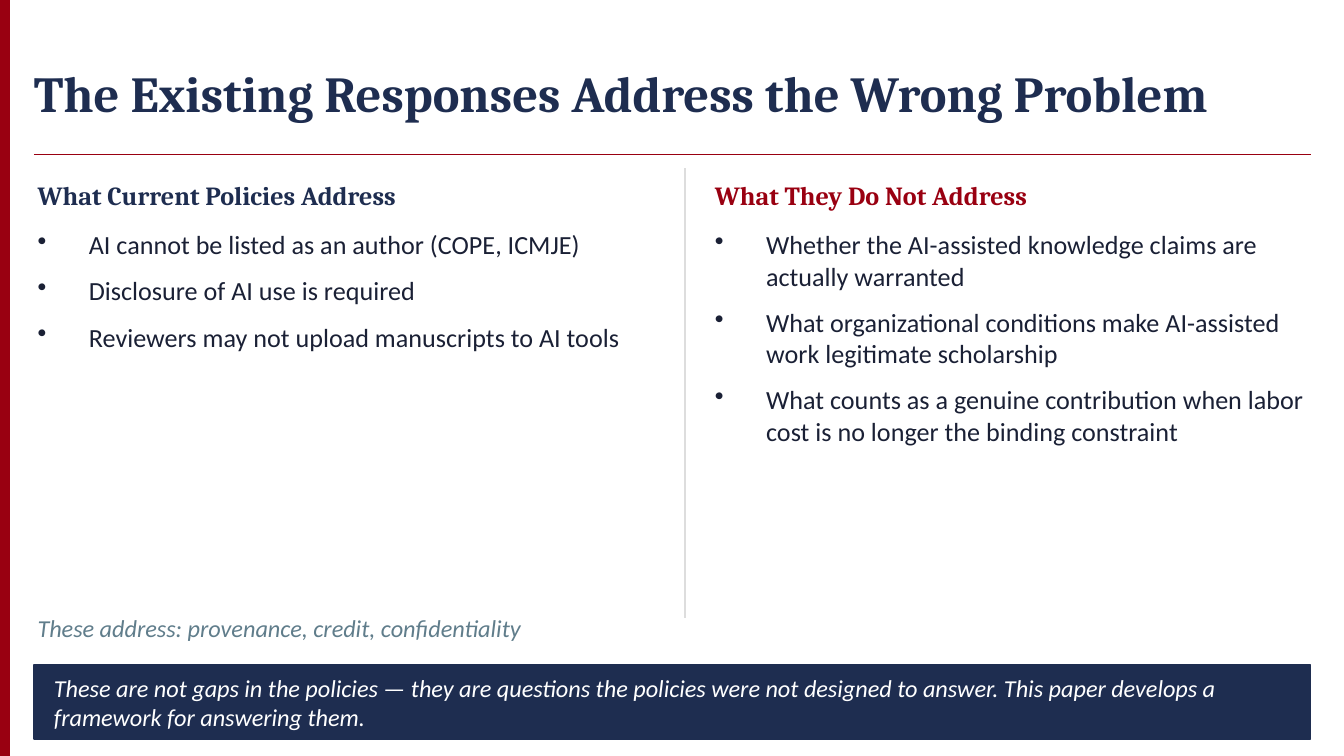
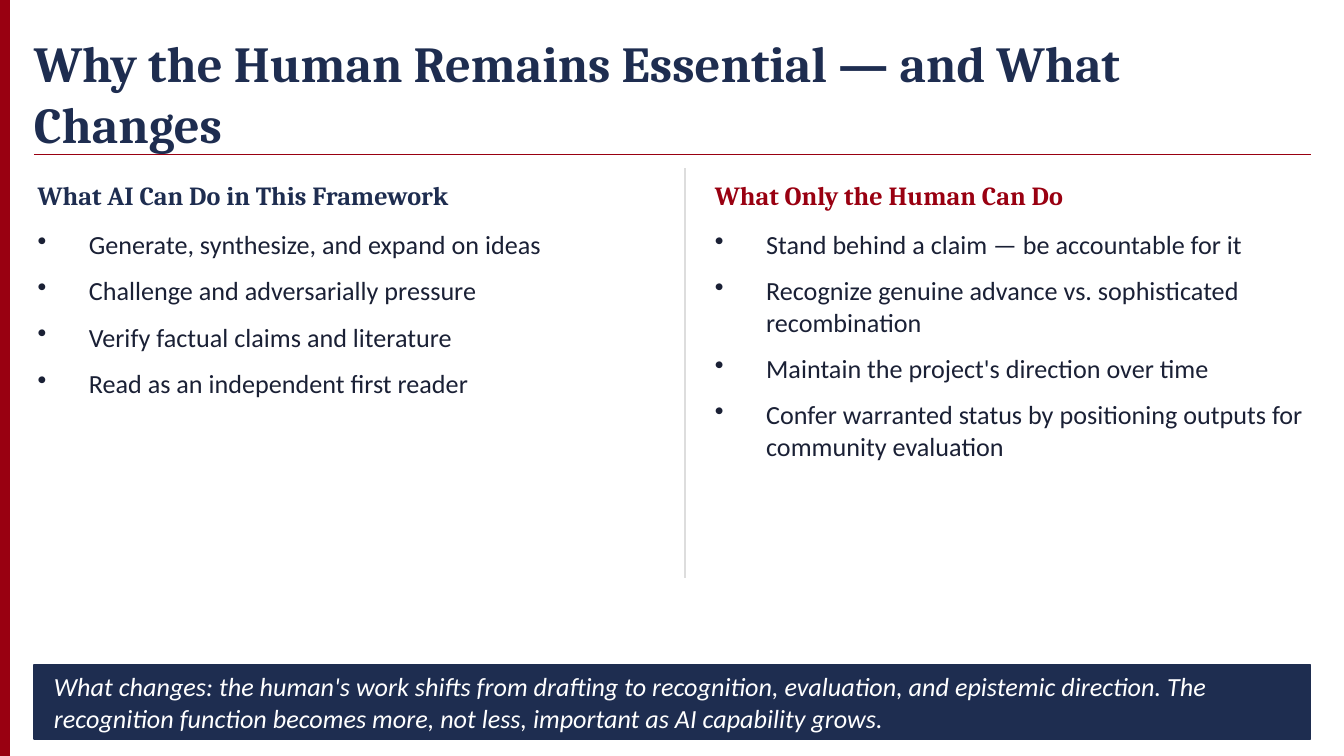
from lxml import etree
from pptx import Presentation
from pptx.dml.color import RGBColor
from pptx.enum import shapes, text
from pptx.oxml import ns
from pptx.util import Cm, Pt

WIDTH, HEIGHT = 25.4, 14.29
EDGE, SPAN = 0.64, 24.13
LEFT, RIGHT = 0.71, 13.51
HEAD_TOP, LIST_TOP = 3.18, 4.32
INDENT = 0.97
HEAD, BODY = "Cambria", "Calibri"
COLORS = {
    "red": "990011",
    "navy": "1E2D50",
    "ink": "1A2035",
    "slate": "607D8B",
    "gray": "DDDDDD",
    "white": "FFFFFF",
}

SLIDES = [
    {
        "title": "The Existing Responses Address the Wrong Problem",
        "left": ("What Current Policies Address", [
            "AI cannot be listed as an author (COPE, ICMJE)",
            "Disclosure of AI use is required",
            "Reviewers may not upload manuscripts to AI tools",
        ]),
        "right": ("What They Do Not Address", [
            "Whether the AI-assisted knowledge claims are actually warranted",
            "What organizational conditions make AI-assisted work legitimate scholarship",
            "What counts as a genuine contribution when labor cost is no longer "
            "the binding constraint",
        ]),
        "note": "These address: provenance, credit, confidentiality",
        "split": 11.68,
        "banner": "These are not gaps in the policies — they are questions the policies "
                  "were not designed to answer. This paper develops a framework for "
                  "answering them.",
        "size": 13,
    },
    {
        "title": "Why the Human Remains Essential — and What Changes",
        "left": ("What AI Can Do in This Framework", [
            "Generate, synthesize, and expand on ideas",
            "Challenge and adversarially pressure",
            "Verify factual claims and literature",
            "Read as an independent first reader",
        ]),
        "right": ("What Only the Human Can Do", [
            "Stand behind a claim — be accountable for it",
            "Recognize genuine advance vs. sophisticated recombination",
            "Maintain the project's direction over time",
            "Confer warranted status by positioning outputs for community evaluation",
        ]),
        "note": None,
        "split": 10.92,
        "banner": "What changes: the human's work shifts from drafting to recognition, "
                  "evaluation, and epistemic direction. The recognition function becomes "
                  "more, not less, important as AI capability grows.",
        "size": 14,
    },
]


def rgb(name):
    return RGBColor.from_string(COLORS[name])


def write(shape, words, face, size, color, bold=False, italic=False,
          anchor=text.MSO_ANCHOR.MIDDLE):
    """Fill a shape with left-aligned text, without margins."""
    frame = shape.text_frame
    frame.text = words
    frame.word_wrap = True
    frame.auto_size = text.MSO_AUTO_SIZE.NONE
    frame.vertical_anchor = anchor
    frame.margin_left = frame.margin_right = 0
    frame.margin_top = frame.margin_bottom = 0
    for para in frame.paragraphs:
        para.alignment = text.PP_ALIGN.LEFT
        for run in para.runs:
            font = run.font
            font.name, font.size = face, Pt(size)
            font.bold, font.italic = bold, italic
            font.color.rgb = rgb(color)
    return frame


def box(slide, x, y, w, h):
    return slide.shapes.add_textbox(Cm(x), Cm(y), Cm(w), Cm(h))


def bar(slide, x, y, w, h, color):
    shape = slide.shapes.add_shape(
        shapes.MSO_SHAPE.RECTANGLE, Cm(x), Cm(y), Cm(w), Cm(h))
    shape.shadow.inherit = False
    shape.fill.solid()
    shape.fill.fore_color.rgb = rgb(color)
    shape.line.color.rgb = rgb(color)
    shape.line.width = Pt(1)
    return shape


def rule(slide, x1, y1, x2, y2, color, width):
    line = slide.shapes.add_connector(
        shapes.MSO_CONNECTOR.STRAIGHT, Cm(x1), Cm(y1), Cm(x2), Cm(y2))
    line.line.color.rgb = rgb(color)
    line.line.width = Pt(width)
    etree.SubElement(line._element.spPr, ns.qn("a:effectLst"))


def bullet(para):
    props = para._p.get_or_add_pPr()
    props.set("marL", str(Cm(INDENT)))
    props.set("indent", str(-Cm(INDENT)))
    etree.SubElement(props, ns.qn("a:buChar")).set("char", "•")
    para.space_after = Pt(8)


def column(slide, x, w, heading, items, color):
    write(box(slide, x, HEAD_TOP, w, 1.02), heading, HEAD, 14, color, bold=True)
    frame = write(box(slide, x, LIST_TOP, w, 6.86), "\n".join(items),
                  BODY, 14, "ink", anchor=text.MSO_ANCHOR.TOP)
    for para in frame.paragraphs:
        bullet(para)


def banner(slide, words, size):
    shape = bar(slide, EDGE, 12.57, SPAN, 1.4, "navy")
    frame = write(shape, words, BODY, size, "white", italic=True)
    frame.margin_left = frame.margin_right = Cm(0.38)


def base(deck, title):
    """Add a slide with the shared edge band, title and rule."""
    slide = deck.slides.add_slide(deck.slide_layouts[5])
    bar(slide, 0, 0, 0.18, HEIGHT, "red")
    head = slide.shapes.title
    head.left, head.top = Cm(EDGE), Cm(0.71)
    head.width, head.height = Cm(SPAN), Cm(2.08)
    write(head, title, HEAD, 27, "navy", bold=True)
    rule(slide, EDGE, 2.92, EDGE + SPAN, 2.92, "red", 0.75)
    return slide


def main():
    deck = Presentation()
    deck.slide_width, deck.slide_height = Cm(WIDTH), Cm(HEIGHT)
    for page in SLIDES:
        slide = base(deck, page["title"])
        column(slide, LEFT, 11.68, *page["left"], "navy")
        if page["note"]:
            write(box(slide, LEFT, 11.3, 11.68, 1.14), page["note"],
                  BODY, 13, "slate", italic=True)
        rule(slide, 12.95, HEAD_TOP, 12.95, page["split"], "gray", 1)
        column(slide, RIGHT, 11.3, *page["right"], "red")
        banner(slide, page["banner"], page["size"])
    deck.save("out.pptx")


if __name__ == "__main__":
    main()
